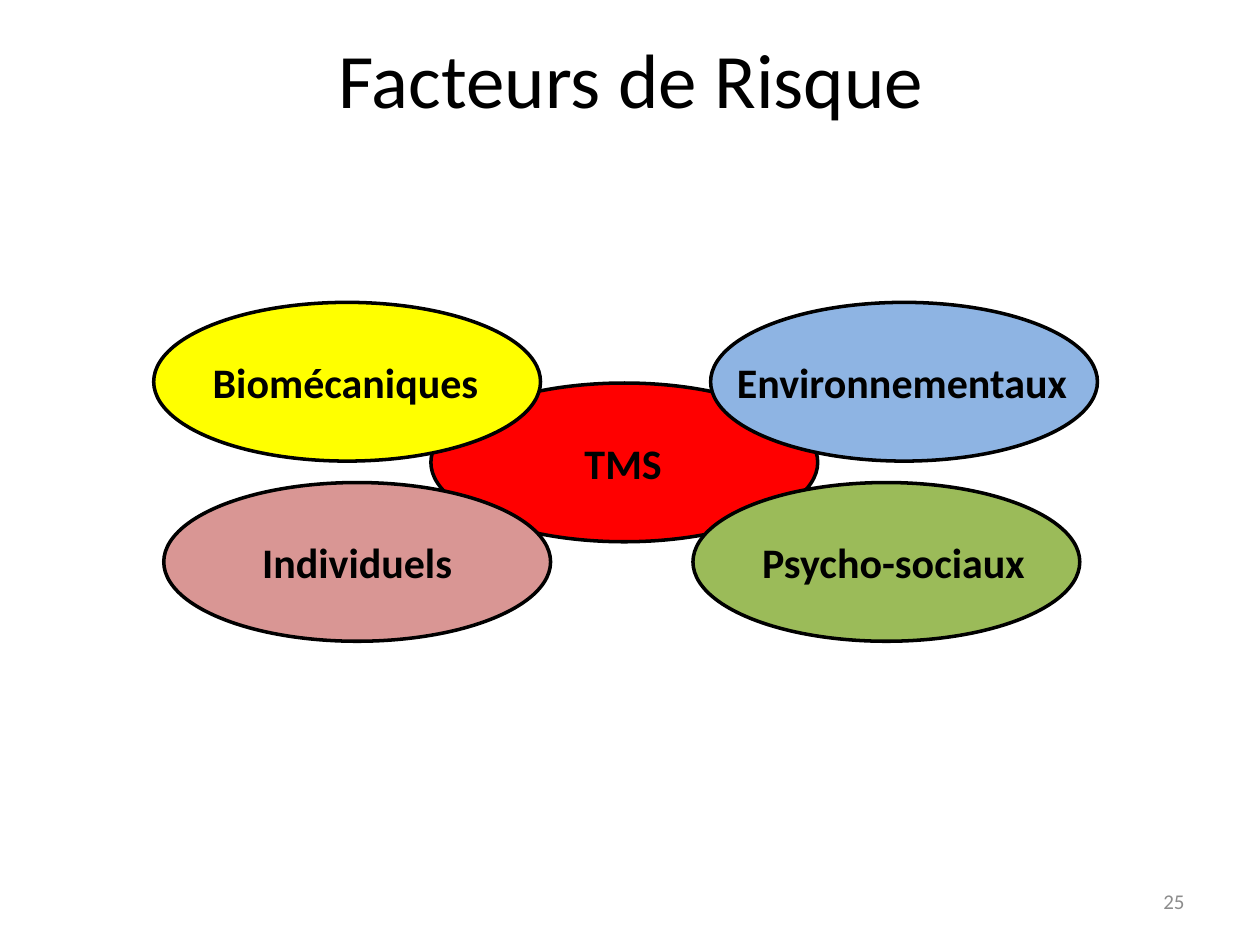
from pptx import Presentation
from pptx.dml.color import RGBColor
from pptx.enum.shapes import MSO_SHAPE as Shape
from pptx.enum.text import MSO_ANCHOR as Anchor, MSO_AUTO_SIZE as AutoSize, PP_ALIGN as Align
from pptx.util import Inches, Pt

COLORS = {
    "black": "000000",
    "grey": "8C8C8C",
    "red": "FF0000",
    "green": "9BBB59",
    "blue": "8EB4E3",
    "pink": "D99694",
    "yellow": "FFFF00",
}
OVAL_WIDTH, OVAL_HEIGHT = 3.07, 1.26
LABEL_HEIGHT = 0.5
UPPER, LOWER = 2.4, 3.83


class RiskSlide:
    """Holds the text style and the current page, and draws its elements."""

    font = "Calibri"

    def __init__(self, page):
        self.page = page

    def color(self, name):
        return RGBColor.from_string(COLORS[name])

    def text(self, shapes, words, place, size, align=Align.LEFT, color="black",
             bold=False, wrap=True):
        box = shapes.add_textbox(*map(Inches, place))
        frame = box.text_frame
        frame.text = words
        frame.word_wrap = wrap
        frame.auto_size = AutoSize.NONE if wrap else AutoSize.SHAPE_TO_FIT_TEXT
        frame.vertical_anchor = Anchor.MIDDLE if wrap else Anchor.TOP
        para = frame.paragraphs[0]
        para.alignment = align
        span = para.runs[0]
        span.font.name = self.font
        span.font.size = Pt(size)
        span.font.bold = bold
        span.font.color.rgb = self.color(color)

    def factor(self, words, fill, left, top, label_left, label_width, align=Align.LEFT):
        group = self.page.shapes.add_group_shape()
        oval = group.shapes.add_shape(
            Shape.OVAL, *map(Inches, (left, top, OVAL_WIDTH, OVAL_HEIGHT)))
        oval.shadow.inherit = False
        oval.fill.solid()
        oval.fill.fore_color.rgb = self.color(fill)
        oval.line.color.rgb = self.color("black")
        oval.line.width = Pt(2)
        label_top = top + (OVAL_HEIGHT - LABEL_HEIGHT) / 2
        self.text(group.shapes, words, (label_left, label_top, label_width, LABEL_HEIGHT),
                  24, align, bold=True, wrap=False)


def main():
    deck = Presentation()
    deck.slide_width, deck.slide_height = Inches(10), Inches(7.5)
    slide = RiskSlide(deck.slides.add_slide(deck.slide_layouts[6]))
    shapes = slide.page.shapes

    slide.factor("TMS", "red", 3.42, 3.04, 4.54, 0.82)
    slide.text(shapes, "25", (7.17, 6.95, 2.33, 0.4), 12, Align.RIGHT, "grey")
    slide.factor("Psycho-sociaux", "green", 5.5, LOWER, 5.95, 2.31)
    slide.factor("Environnementaux", "blue", 5.64, UPPER, 5.75, 2.85)
    slide.factor("Individuels", "pink", 1.3, LOWER, 1.97, 1.73, Align.CENTER)
    slide.factor("Biomécaniques", "yellow", 1.22, UPPER, 1.59, 2.33)
    slide.text(shapes, "Facteurs de Risque", (0.51, 0, 9, 1.23), 44, Align.CENTER)

    deck.save("out.pptx")


if __name__ == "__main__":
    main()
